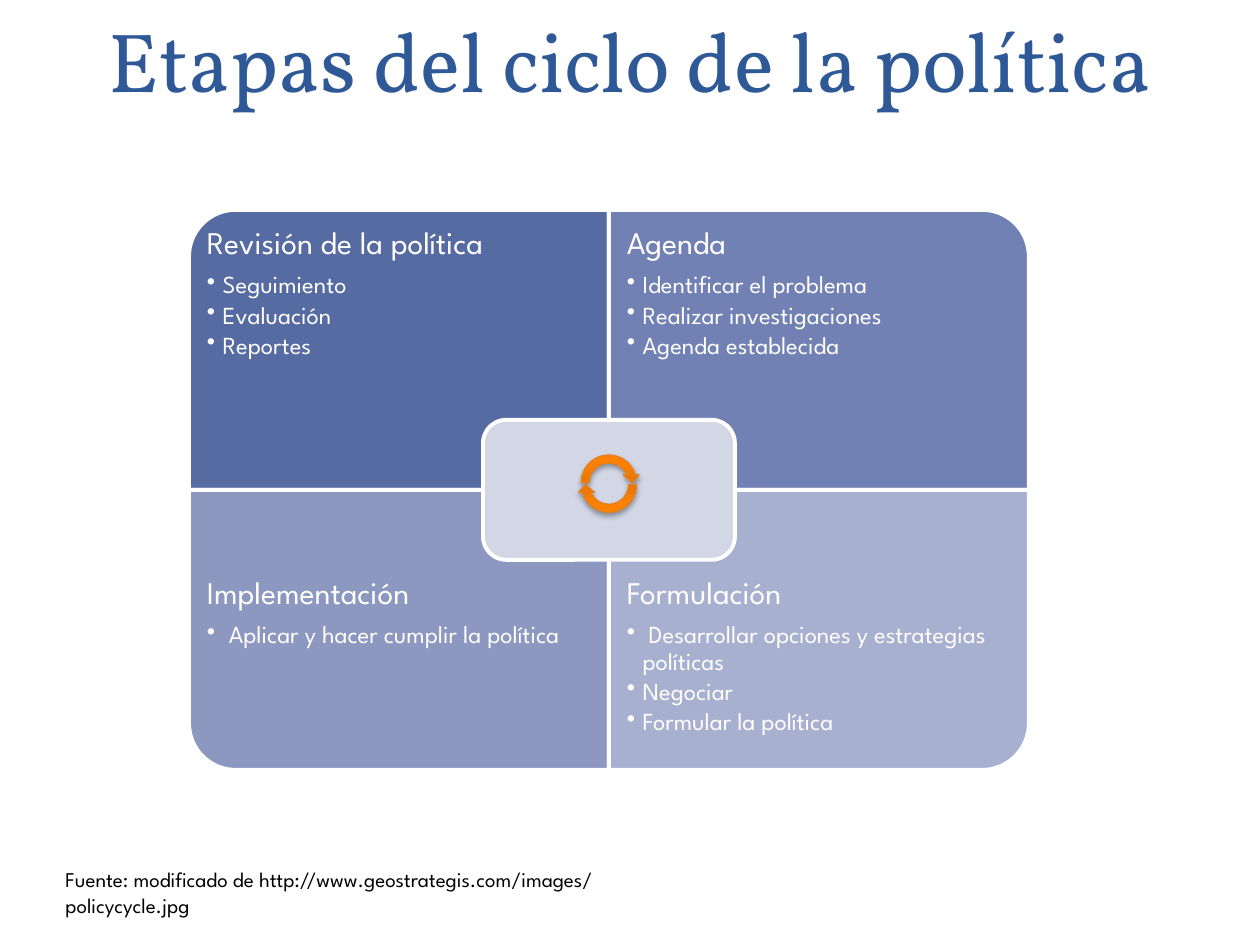
from copy import deepcopy

from lxml import etree
from pptx import Presentation
from pptx import util as u
from pptx.dml.color import RGBColor
from pptx.enum import shapes, text
from pptx.oxml import ns

COLORS = {
    "title": "2F5897", "white": "FFFFFF", "black": "000000",
    "review": "576BA3", "agenda": "7181B3",
    "implementation": "8C98C0", "formulation": "A7B0CF",
    "center": "D2D6E5", "arrow_line": "E6811C",
    "arrow_dark": "C26203", "arrow_mid": "FB8004", "arrow_light": "FF8002",
}
TITLE_FONT = "Vollkorn"
BODY_FONT = "League Spartan"
STAGES = [
    ("review", 0, 0, 270, "Revisión de la política",
     ["Seguimiento", "Evaluación", "Reportes"]),
    ("agenda", 1, 0, 0, "Agenda",
     ["Identificar el problema", "Realizar investigaciones", "Agenda establecida"]),
    ("implementation", 0, 1, 180, "Implementación",
     [" Aplicar y hacer cumplir la política"]),
    ("formulation", 1, 1, 90, "Formulación",
     [" Desarrollar opciones y estrategias políticas", "Negociar", "Formular la política"]),
]


def rgb(name):
    return RGBColor.from_string(COLORS[name])


def cm_box(*lengths):
    return [u.Cm(length) for length in lengths]


def set_font(para, name, size, color):
    para.font.name = name
    para.font.size = u.Pt(size)
    para.font.color.rgb = rgb(color)


def add_bullet(para, indent):
    props = para._p.get_or_add_pPr()
    props.set("marL", str(indent))
    props.set("indent", str(-indent))
    etree.SubElement(props, ns.qn("a:buChar"), char="•")


def add_panel(page, kind, left, top, width, height, color):
    panel = page.shapes.add_shape(kind, *cm_box(left, top, width, height))
    panel.shadow.inherit = False
    panel.fill.solid()
    panel.fill.fore_color.rgb = rgb(color)
    panel.line.color.rgb = rgb("white")
    panel.line.width = u.Pt(2.25)
    return panel


def add_title(page, left, top, width, height):
    title = page.shapes.title
    title.left, title.top, title.width, title.height = cm_box(left, top, width, height)
    frame = title.text_frame
    frame.text = "Etapas del ciclo de la política"
    frame.auto_size = text.MSO_AUTO_SIZE.NONE
    frame.vertical_anchor = text.MSO_ANCHOR.BOTTOM
    para = frame.paragraphs[0]
    para.alignment = text.PP_ALIGN.CENTER
    para.line_spacing = u.Pt(58)
    set_font(para, TITLE_FONT, 48, "title")


def add_stage_text(page, left, top, width, height, heading, items):
    box = page.shapes.add_textbox(*cm_box(left, top, width, height))
    frame = box.text_frame
    frame.word_wrap = True
    frame.margin_left = frame.margin_right = u.Cm(0.36)
    frame.margin_top = frame.margin_bottom = u.Cm(0.36)
    for index, line in enumerate([heading] + items):
        para = frame.add_paragraph() if index else frame.paragraphs[0]
        para.text = line
        para.line_spacing = 0.9
        para.space_after = u.Pt(2.1 if index else 6.3)
        if index:
            para.level = 1
            add_bullet(para, u.Cm(0.32))
        set_font(para, BODY_FONT, 14 if index else 18, "white")


def add_stage(page, left, top, width, height, color, row, rotation, heading, items):
    across, down = (height, width) if rotation % 180 else (width, height)
    panel = add_panel(page, shapes.MSO_SHAPE.ROUND_1_RECTANGLE,
                      left + (width - across) / 2, top + (height - down) / 2,
                      across, down, color)
    panel.rotation = rotation
    text_height = height * 0.75
    text_top = top + row * (height - text_height)
    add_stage_text(page, left, text_top, width, text_height, heading, items)


def add_cycle_arrow(page, left, top, size, rotation):
    arrow = page.shapes.add_shape(shapes.MSO_SHAPE.CIRCULAR_ARROW,
                                  *cm_box(left, top, size, size))
    arrow.rotation = rotation
    arrow.fill.gradient()
    arrow.fill.gradient_angle = 90
    stop_list = arrow._element.spPr.find(".//" + ns.qn("a:gsLst"))
    stop_list.append(deepcopy(stop_list[-1]))
    tones = [(0, "arrow_dark"), (0.8, "arrow_mid"), (1, "arrow_light")]
    for stop, (position, color) in zip(arrow.fill.gradient_stops, tones):
        stop.position = position
        stop.color.rgb = rgb(color)
    arrow.line.color.rgb = rgb("arrow_line")
    arrow.line.width = u.Pt(0.75)
    arrow.shadow.inherit = False
    effects = arrow._element.spPr.find(ns.qn("a:effectLst"))
    shadow = etree.SubElement(effects, ns.qn("a:outerShdw"), blurRad=str(u.Pt(3.1)),
                              dist=str(u.Pt(1.8)), dir="5400000", rotWithShape="0")
    tint = etree.SubElement(shadow, ns.qn("a:srgbClr"), val=COLORS["black"])
    etree.SubElement(tint, ns.qn("a:alpha"), val="35000")


def add_cycle(page, left, top, width, height):
    cell_width, cell_height = width / 2, height / 2
    for color, column, row, rotation, heading, items in STAGES:
        add_stage(page, left + column * cell_width, top + row * cell_height,
                  cell_width, cell_height, color, row, rotation, heading, items)
    middle_x, middle_y = left + cell_width, top + cell_height
    hub_width, hub_height = width * 0.3, height / 4
    add_panel(page, shapes.MSO_SHAPE.ROUNDED_RECTANGLE, middle_x - hub_width / 2,
              middle_y - hub_height / 2, hub_width, hub_height, "center")
    size = 1.27
    for rise, rotation in [(0.78, 0), (0.74, 180)]:
        add_cycle_arrow(page, middle_x - size / 2, middle_y - rise, size, rotation)


def add_source(page, left, top, width, height):
    box = page.shapes.add_textbox(*cm_box(left, top, width, height))
    frame = box.text_frame
    frame.word_wrap = True
    frame.auto_size = text.MSO_AUTO_SIZE.SHAPE_TO_FIT_TEXT
    para = frame.paragraphs[0]
    para.text = "Fuente: modificado de http://www.geostrategis.com/images/ policycycle.jpg"
    set_font(para, BODY_FONT, 12, "black")


def main():
    deck = Presentation()
    deck.slide_width, deck.slide_height = cm_box(25.4, 19.05)
    page = deck.slides.add_slide(deck.slide_layouts[5])
    add_title(page, 1.27, 0, 22.86, 2.34)
    add_cycle(page, 3.81, 4.23, 16.93, 11.29)
    add_source(page, 1.07, 17.35, 12.7, 1.27)
    deck.save("out.pptx")


if __name__ == "__main__":
    main()
